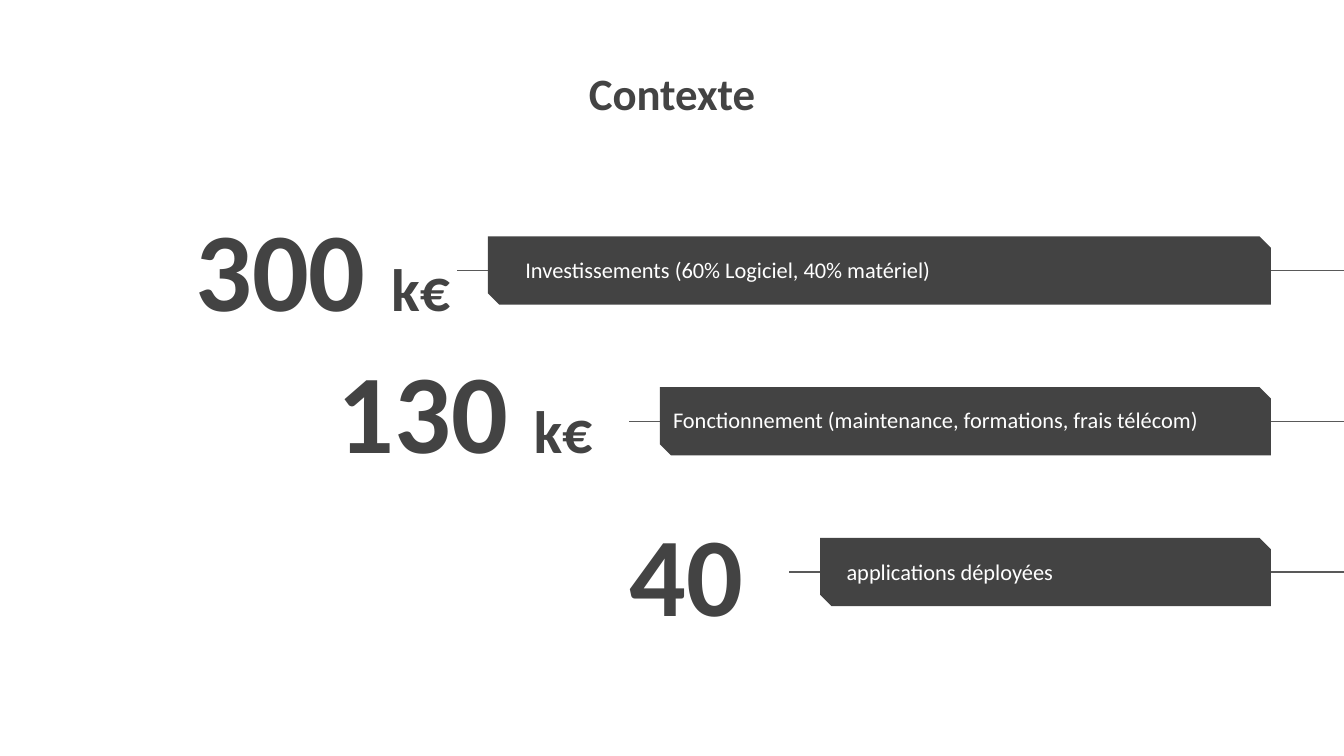
from lxml import etree
from pptx import Presentation
from pptx.dml.color import RGBColor
from pptx.enum.shapes import MSO_CONNECTOR, MSO_SHAPE
from pptx.enum.text import MSO_ANCHOR as Anchor, MSO_AUTO_SIZE as AutoSize, PP_ALIGN as Align
from pptx.oxml.ns import qn
from pptx.util import Cm, Pt

DARK, LINE, WHITE = "434343", "595959", "FFFFFF"
SLIDE_WIDTH, SLIDE_HEIGHT = 25.4, 14.29
BAR_TOP, BAR_PITCH, BAR_HEIGHT, BAR_RIGHT = 4.47, 2.85, 1.29, 24.02
LINE_LEAD = 0.58
NUMBER_HEIGHT, LABEL_HEIGHT = 2.11, 0.94

ROWS = [
    {"bar_left": 9.22, "number": "300 ", "unit": "k€", "number_box": (0.94, 3.99, 7.82),
     "label": "Investissements (60% Logiciel, 40% matériel)",
     "label_box": (9.68, 4.62, 12.45), "label_anchor": Anchor.MIDDLE},
    {"bar_left": 12.47, "number": "130 ", "unit": "k€", "number_box": (2.31, 6.68, 9.14),
     "label": "Fonctionnement (maintenance, formations, frais télécom)",
     "label_box": (12.47, 7.42, 12.78), "label_anchor": Anchor.TOP},
    {"bar_left": 15.5, "number": "40", "unit": "", "number_box": (9.32, 9.75, 4.98),
     "label": "applications déployées",
     "label_box": (15.75, 10.31, 9.07), "label_anchor": Anchor.TOP},
]


def color(value):
    return RGBColor.from_string(value)


def add_run(paragraph, text, size=12, fill=DARK, bold=False):
    run = paragraph.add_run()
    run.text = text
    run.font.name = "Calibri"
    run.font.size = Pt(size)
    run.font.bold = bold
    run.font.color.rgb = color(fill)


def format_frame(shape, anchor, align):
    frame = shape.text_frame
    frame.word_wrap = True
    frame.auto_size = AutoSize.NONE
    frame.vertical_anchor = anchor
    frame.margin_left = frame.margin_right = Cm(0.25)
    frame.margin_top = frame.margin_bottom = Cm(0.25)
    paragraph = frame.paragraphs[0]
    paragraph.alignment = align
    return paragraph


def add_text_box(slide, box, height, anchor, align):
    left, top, width = box
    shape = slide.shapes.add_textbox(Cm(left), Cm(top), Cm(width), Cm(height))
    return format_frame(shape, anchor, align)


def set_title(slide, text):
    title = slide.shapes.title
    title.left, title.top = Cm(5.46), Cm(0.99)
    title.width, title.height = Cm(14.48), Cm(2.62)
    add_run(format_frame(title, Anchor.TOP, Align.CENTER), text, size=24, bold=True)


def add_line(slide, left, y):
    line = slide.shapes.add_connector(
        MSO_CONNECTOR.STRAIGHT, Cm(SLIDE_WIDTH), Cm(y), Cm(left), Cm(y))
    line.line.color.rgb = color(LINE)
    line.line.width = Pt(0.75)
    etree.SubElement(line._element.spPr, qn("a:effectLst"))


def add_bar(slide, left, top):
    add_line(slide, left - LINE_LEAD, top + BAR_HEIGHT / 2)
    bar = slide.shapes.add_shape(
        MSO_SHAPE.SNIP_2_DIAG_RECTANGLE,
        Cm(left), Cm(top), Cm(BAR_RIGHT - left), Cm(BAR_HEIGHT))
    bar.adjustments[0] = 0
    bar.adjustments[1] = 0.167
    bar.shadow.inherit = False
    bar.fill.solid()
    bar.fill.fore_color.rgb = color(DARK)
    bar.line.fill.background()


def add_number(slide, row):
    paragraph = add_text_box(
        slide, row["number_box"], NUMBER_HEIGHT, Anchor.MIDDLE, Align.RIGHT)
    add_run(paragraph, row["number"], size=60, bold=True)
    if row["unit"]:
        add_run(paragraph, row["unit"], size=32, bold=True)


def add_label(slide, row):
    paragraph = add_text_box(
        slide, row["label_box"], LABEL_HEIGHT, row["label_anchor"], Align.LEFT)
    add_run(paragraph, row["label"], fill=WHITE)


def main():
    presentation = Presentation()
    presentation.slide_width = Cm(SLIDE_WIDTH)
    presentation.slide_height = Cm(SLIDE_HEIGHT)
    slide = presentation.slides.add_slide(presentation.slide_layouts[5])
    set_title(slide, "Contexte")
    for index, row in enumerate(ROWS):
        add_bar(slide, row["bar_left"], BAR_TOP + index * BAR_PITCH)
        add_number(slide, row)
        add_label(slide, row)
    presentation.save("out.pptx")


if __name__ == "__main__":
    main()
